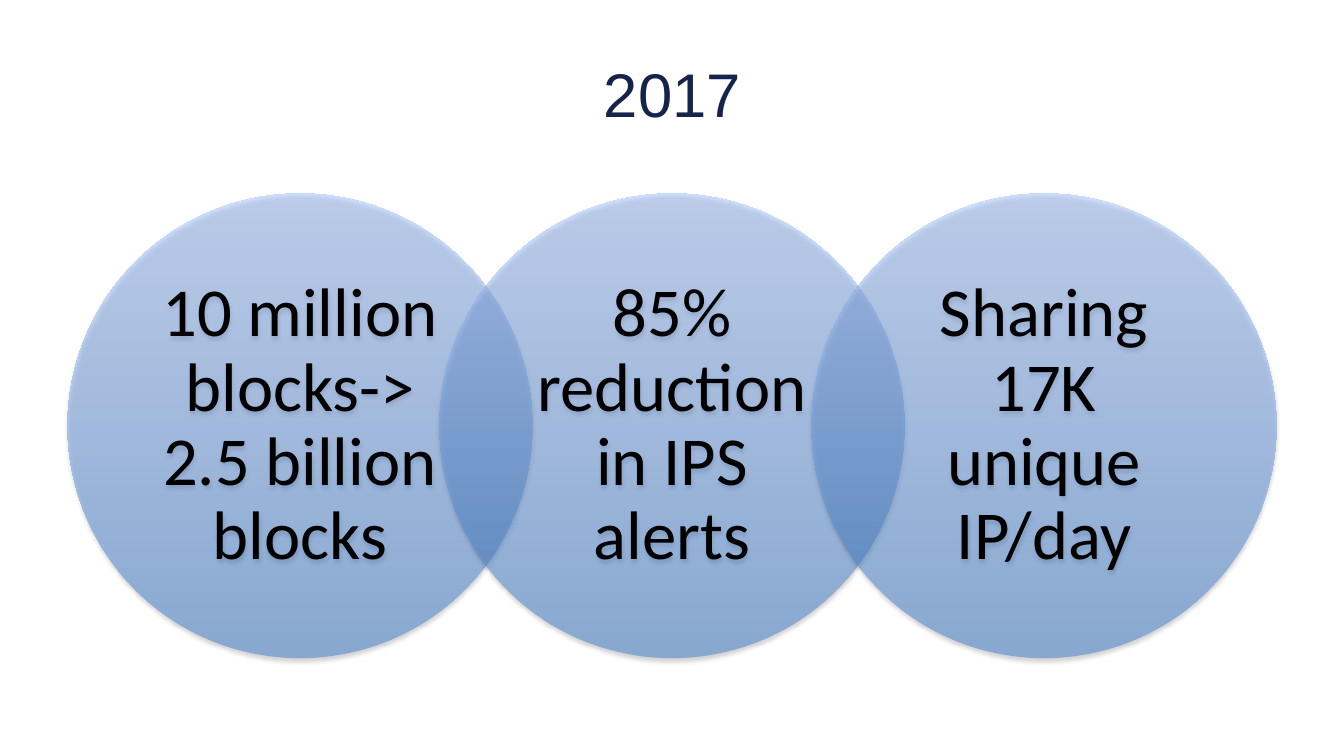
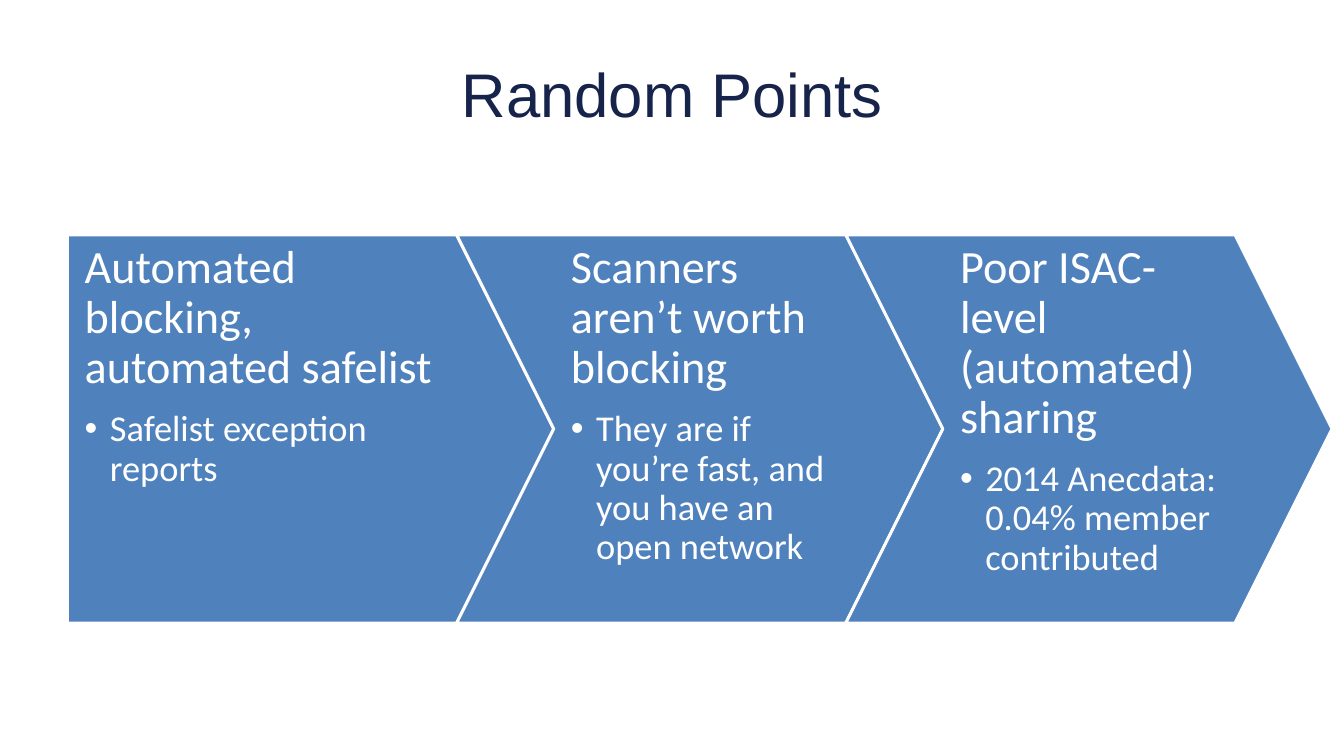
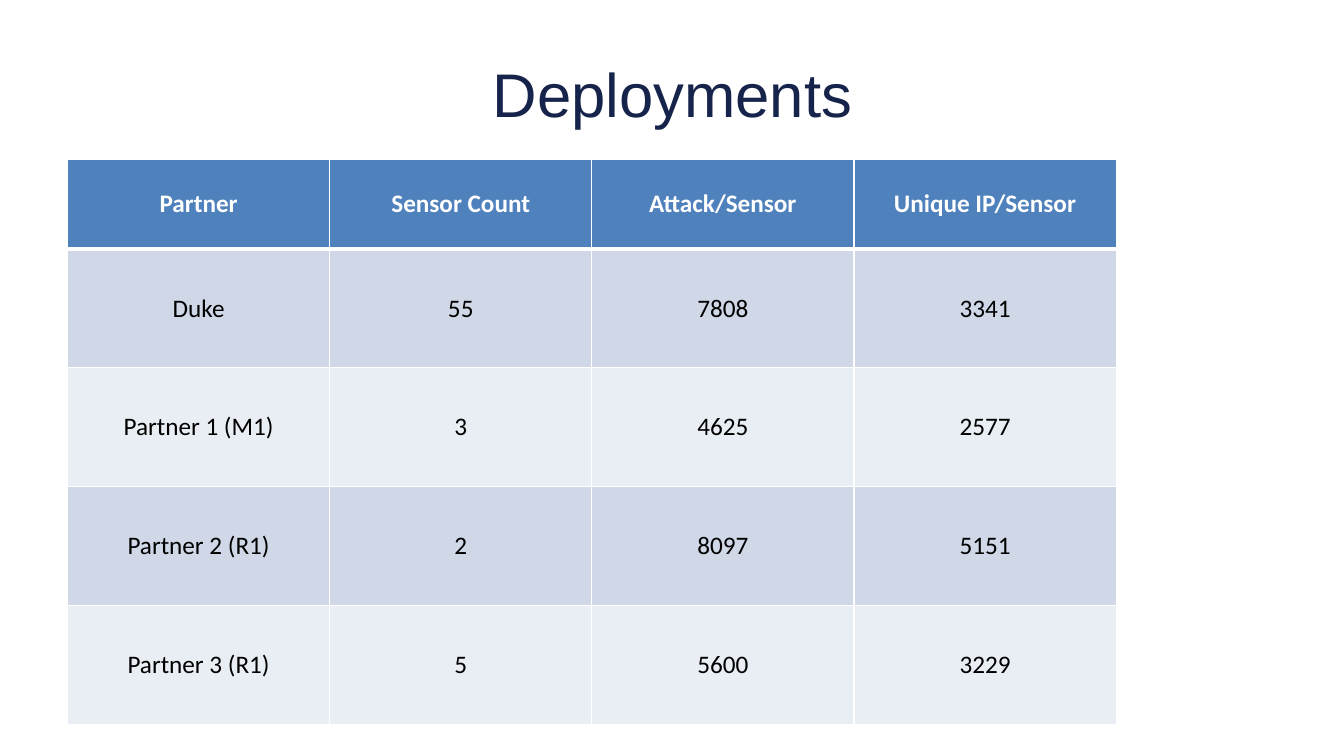
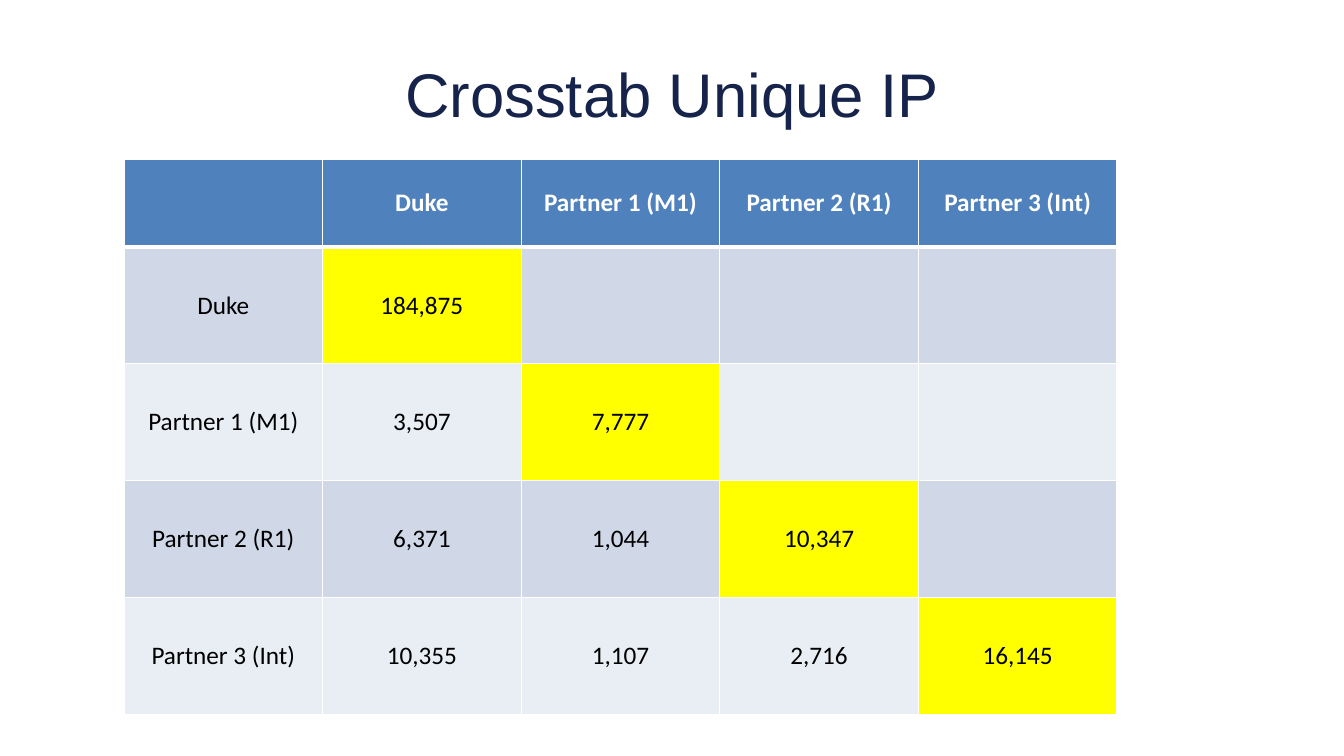
from lxml.etree import SubElement
from pptx import Presentation
from pptx.dml.color import RGBColor
from pptx.enum.shapes import MSO_SHAPE
from pptx.enum.text import MSO_ANCHOR, PP_ALIGN
from pptx.oxml.ns import qn
from pptx.util import Pt

PX = 9144  # 100 px to the inch
NAVY, BLUE, WHITE, BLACK = "16234A", "4F81BD", "FFFFFF", "000000"
BANDS = ("D0D8E8", "E9EDF4")
HIGHLIGHT = "FFFF00"
GRADIENT = ("3F7FCE", "A4C4FF")
LEFT = 67

RESULTS = [
    "10 million blocks-> 2.5 billion blocks",
    "85% reduction in IPS alerts",
    "Sharing 17K unique IP/day",
]
POINTS = [
    ("Automated blocking, automated safelist", "Safelist exception reports"),
    ("Scanners aren’t worth blocking",
     "They are if you’re fast, and you have an open network"),
    ("Poor ISAC-level (automated) sharing",
     "2014 Anecdata: 0.04% member contributed"),
]
DEPLOYMENTS = [
    ("Partner", "Sensor Count", "Attack/Sensor", "Unique IP/Sensor"),
    ("Duke", "55", "7808", "3341"),
    ("Partner 1 (M1)", "3", "4625", "2577"),
    ("Partner 2 (R1)", "2", "8097", "5151"),
    ("Partner 3 (R1)", "5", "5600", "3229"),
]
CROSSTAB = [
    ("", "Duke", "Partner 1 (M1)", "Partner 2 (R1)", "Partner 3 (Int)"),
    ("Duke", "184,875", "", "", ""),
    ("Partner 1 (M1)", "3,507", "7,777", "", ""),
    ("Partner 2 (R1)", "6,371", "1,044", "10,347", ""),
    ("Partner 3 (Int)", "10,355", "1,107", "2,716", "16,145"),
]


def rgb(color):
    return RGBColor.from_string(color)


def px(*lengths):
    return [length * PX for length in lengths]


def add_run(p, text, size, color, font="Calibri", bold=False):
    r = p.add_run()
    r.text = text
    r.font.size, r.font.name, r.font.bold = Pt(size), font, bold
    r.font.color.rgb = rgb(color)


def set_insets(tf, *insets):
    """Set left, top, right and bottom insets in px."""
    tf.margin_left, tf.margin_top, tf.margin_right, tf.margin_bottom = px(*insets)


def add_slide(prs, title):
    s = prs.slides.add_slide(prs.slide_layouts[5])
    sp = s.shapes.title
    sp.left, sp.top, sp.width, sp.height = px(LEFT, 30, 1200, 125)
    tf = sp.text_frame
    tf.vertical_anchor = MSO_ANCHOR.MIDDLE
    p = tf.paragraphs[0]
    p.alignment = PP_ALIGN.CENTER
    add_run(p, title, 44, NAVY, "Arial")
    return s


def add_shape(s, kind, *box):
    sp = s.shapes.add_shape(kind, *px(*box))
    sp.shadow.inherit = False
    sp.text_frame.word_wrap = True
    return sp


def fill_glass(sp):
    """Half-transparent vertical gradient with a soft shadow below."""
    sp.line.fill.background()
    sp.fill.gradient()
    sp.fill.gradient_angle = 90
    for stop, color in zip(sp.fill.gradient_stops, GRADIENT):
        stop.color.rgb = rgb(color)
    for clr in sp._element.spPr.iter(qn("a:srgbClr")):
        SubElement(clr, qn("a:alpha"), val="50000")
    effects = sp._element.spPr.find(qn("a:effectLst"))
    shadow = SubElement(effects, qn("a:outerShdw"), blurRad=str(Pt(3.1)),
                        dist=str(Pt(1.8)), dir="5400000", rotWithShape="0")
    clr = SubElement(shadow, qn("a:srgbClr"), val=BLACK)
    SubElement(clr, qn("a:alpha"), val="35000")


def add_circles(s, texts):
    size, step = 461, 369
    for i, text in enumerate(texts):
        sp = add_shape(s, MSO_SHAPE.OVAL, LEFT + i * step, 192, size, size)
        fill_glass(sp)
        tf = sp.text_frame
        tf.vertical_anchor = MSO_ANCHOR.MIDDLE
        set_insets(tf, 25, 7, 25, 7)
        p = tf.paragraphs[0]
        p.alignment, p.line_spacing = PP_ALIGN.CENTER, 0.9
        add_run(p, text, 49, BLACK)


def set_bullet(p):
    pPr = p._p.get_or_add_pPr()
    pPr.set("marL", str(25 * PX))
    pPr.set("indent", str(-25 * PX))
    SubElement(pPr, qn("a:buFont"), typeface="Arial")
    SubElement(pPr, qn("a:buChar"), char="•")


def add_arrows(s, points):
    width, height = 482, 385
    step = width - height // 4
    for i, (heading, detail) in enumerate(points):
        kind = MSO_SHAPE.CHEVRON if i else MSO_SHAPE.PENTAGON
        sp = add_shape(s, kind, LEFT + i * step, 233, width, height)
        sp.adjustments[0] = 0.25
        sp.fill.solid()
        sp.fill.fore_color.rgb = rgb(BLUE)
        sp.line.color.rgb = rgb(WHITE)
        sp.line.width = Pt(2)
        tf = sp.text_frame
        tf.vertical_anchor = MSO_ANCHOR.TOP
        set_insets(tf, 17, 9, 17 if i else 68, 9)
        head, item = tf.paragraphs[0], tf.add_paragraph()
        set_bullet(item)
        item.level = 1
        item.space_before = Pt(12)
        for p, text, size in ((head, heading, 33), (item, detail, 26)):
            p.alignment, p.line_spacing = PP_ALIGN.LEFT, 0.9
            add_run(p, text, size, WHITE)


def set_borders(cell, top, bottom):
    """White borders; top and bottom widths in points, sides 1 pt."""
    tcPr = cell._tc.get_or_add_tcPr()
    for side, width in (("L", 1), ("R", 1), ("T", top), ("B", bottom)):
        ln = SubElement(tcPr, qn("a:ln" + side), w=str(Pt(width)))
        SubElement(SubElement(ln, qn("a:solidFill")), qn("a:srgbClr"), val=WHITE)


def add_table(s, rows, left, col_width, head_height, row_height, diagonal=False):
    n_rows, n_cols = len(rows), len(rows[0])
    heights = [head_height] + [row_height] * (n_rows - 1)
    table = s.shapes.add_table(n_rows, n_cols, *px(
        left, 158, col_width * n_cols, sum(heights))).table
    for col in table.columns:
        col.width = col_width * PX
    for i, (row, height) in enumerate(zip(rows, heights)):
        table.rows[i].height = height * PX
        for j, text in enumerate(row):
            cell = table.cell(i, j)
            set_borders(cell, 3 if i == 1 else 1, 3 if i == 0 else 1)
            color = BANDS[(i - 1) % 2] if i else BLUE
            if diagonal and i == j > 0:
                color = HIGHLIGHT
            cell.fill.solid()
            cell.fill.fore_color.rgb = rgb(color)
            cell.vertical_anchor = MSO_ANCHOR.MIDDLE
            if text:
                p = cell.text_frame.paragraphs[0]
                p.alignment = PP_ALIGN.CENTER
                add_run(p, text, 18, BLACK if i else WHITE, bold=i == 0)


def main():
    prs = Presentation()
    prs.slide_width, prs.slide_height = px(1333, 750)
    add_circles(add_slide(prs, "2017"), RESULTS)
    add_arrows(add_slide(prs, "Random Points"), POINTS)
    add_table(add_slide(prs, "Deployments"), DEPLOYMENTS, LEFT, 260, 89, 118)
    add_table(add_slide(prs, "Crosstab Unique IP"), CROSSTAB, 123, 197, 87, 116,
              diagonal=True)
    prs.save("out.pptx")


if __name__ == "__main__":
    main()
